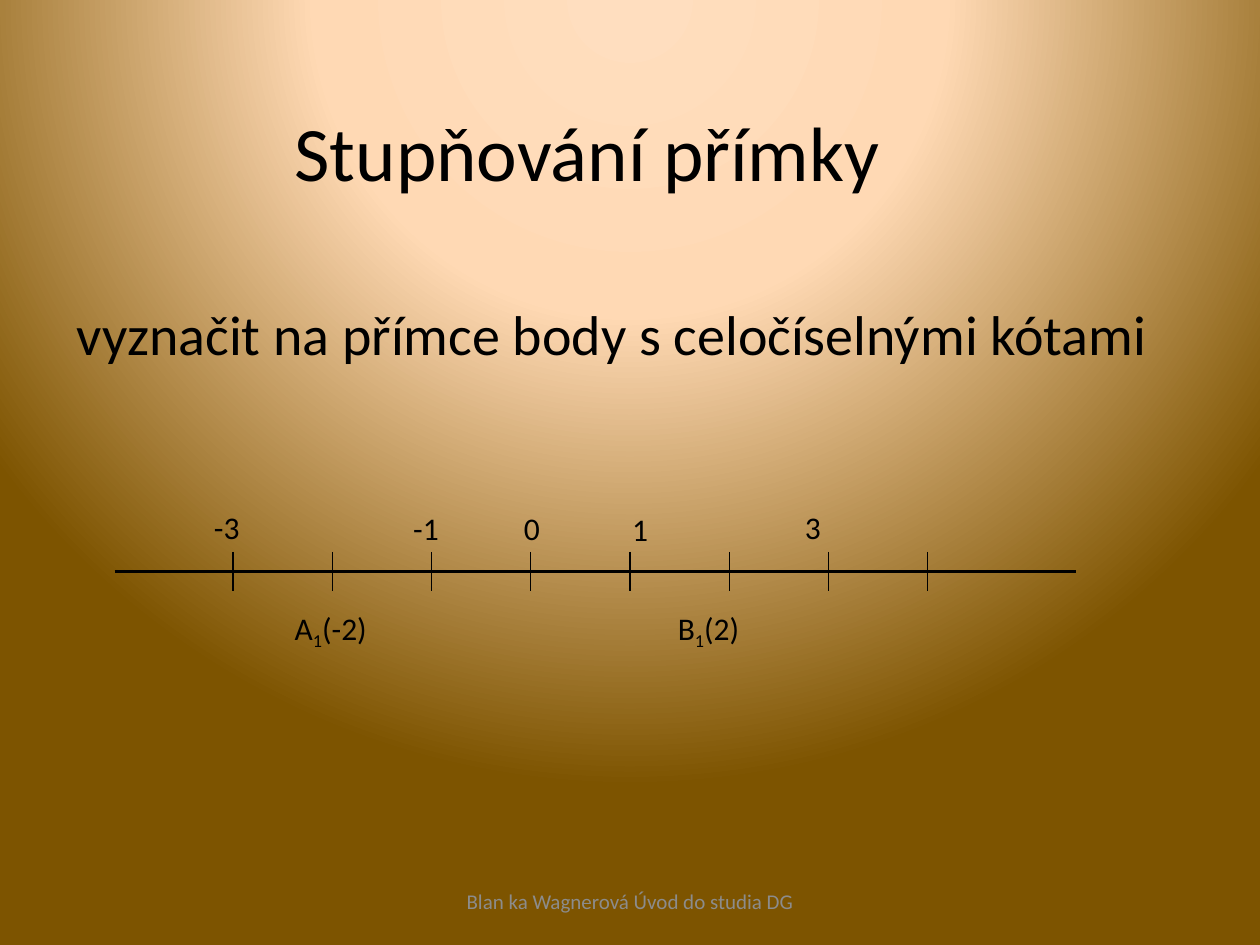
from dataclasses import dataclass

from lxml.etree import SubElement
from pptx import Presentation
from pptx.dml.color import RGBColor
from pptx.enum.shapes import MSO_CONNECTOR
from pptx.enum.text import MSO_ANCHOR as Anchor, PP_ALIGN as Align
from pptx.oxml import parse_xml
from pptx.oxml.ns import nsdecls, qn
from pptx.slide import Slide
from pptx.util import Pt


@dataclass(frozen=True)
class Theme:
    font: str = "Calibri"
    ink: str = "000000"
    muted: str = "8C8C8C"
    gradient: tuple = ((0, "FFDEBF"), (40, "FFD9B4"), (100, "7D5400"))
    title: float = 44
    body: float = 32
    label: float = 18
    footer: float = 12
    axis: float = 1.5
    tick: float = 0.75


@dataclass(frozen=True)
class Label:
    text: str
    left: float
    top: float
    width: float
    height: float
    size: float
    color: str
    align: Align = Align.LEFT
    anchor: Anchor = Anchor.TOP
    before: float = 0
    sub: str = ""
    tail: str = ""


@dataclass(frozen=True)
class Line:
    x1: float
    y1: float
    x2: float
    y2: float
    weight: float


THEME = Theme()


def paint_background(s: Slide) -> None:
    s.background.fill.solid()
    bg = s.element.find(".//" + qn("p:bgPr"))
    stops = "".join(
        f'<a:gs pos="{pos * 1000}"><a:srgbClr val="{color}"/></a:gs>'
        for pos, color in THEME.gradient)
    bg.replace(bg[0], parse_xml(
        f'<a:gradFill {nsdecls("a")} rotWithShape="1"><a:gsLst>{stops}</a:gsLst>'
        '<a:path path="circle"><a:fillToRect l="50000" t="-80000" r="50000" b="180000"/>'
        '</a:path></a:gradFill>'))


def add_label(s: Slide, label: Label) -> None:
    sp = s.shapes.add_textbox(
        Pt(label.left), Pt(label.top), Pt(label.width), Pt(label.height))
    tf = sp.text_frame
    tf.word_wrap = True
    tf.vertical_anchor = label.anchor
    p = tf.paragraphs[0]
    p.alignment = label.align
    p.space_before = Pt(label.before)
    formats = {"name": THEME.font, "size": Pt(label.size)}
    for text, baseline in ((label.text, 0), (label.sub, -25000), (label.tail, 0)):
        if not text:
            continue
        r = p.add_run()
        r.text = text
        for name, value in formats.items():
            setattr(r.font, name, value)
        r.font.color.rgb = RGBColor.from_string(label.color)
        if baseline:
            r.font._element.set("baseline", str(baseline))


def add_line(s: Slide, line: Line) -> None:
    c = s.shapes.add_connector(
        MSO_CONNECTOR.STRAIGHT,
        Pt(line.x1), Pt(line.y1), Pt(line.x2), Pt(line.y2))
    c.line.width = Pt(line.weight)
    c.line.color.rgb = RGBColor.from_string(THEME.ink)
    SubElement(c._element.spPr, qn("a:effectLst"))


def main() -> None:
    prs = Presentation()
    prs.slide_width, prs.slide_height = Pt(720), Pt(540)
    s = prs.slides.add_slide(prs.slide_layouts[6])
    paint_background(s)

    # Title, footer and statement
    for label in (
        Label("Stupňování přímky ", 59.8, 20.9, 561.6, 130.3, THEME.title,
              THEME.ink, Align.CENTER, Anchor.MIDDLE),
        Label("Blan ka Wagnerová Úvod do studia DG", 246, 500.5, 228, 28.8,
              THEME.footer, THEME.muted, Align.CENTER, Anchor.MIDDLE),
        Label("vyznačit na přímce body s celočíselnými kótami", 36.7, 167.8,
              648, 62.6, THEME.body, THEME.ink, before=6.4),
    ):
        add_label(s, label)

    # Number line with evenly spaced ticks
    add_line(s, Line(65.5, 326.7, 615, 326.7, THEME.axis))
    first_tick, step = 133.2, 56.7
    for i in range(8):
        x = first_tick + i * step
        add_line(s, Line(x, 315.4, x, 338, THEME.tick))

    # Named points below the line
    for name, value, left in (("A", "(-2)", 161.3), ("B", "(2)", 380.2)):
        add_label(s, Label(name, left, 344.2, 72.7, 28.8, THEME.label,
                           THEME.ink, sub="1", tail=value))

    # Integer values above the line
    for value, left, top in (("-3", 115.2, 286.6), ("-1", 229, 287.3),
                             ("0", 292.3, 287.3), ("1", 354.2, 288),
                             ("3", 452.9, 286.6)):
        add_label(s, Label(value, left, top, 36, 28.8, THEME.label, THEME.ink))

    prs.save("out.pptx")


if __name__ == "__main__":
    main()
